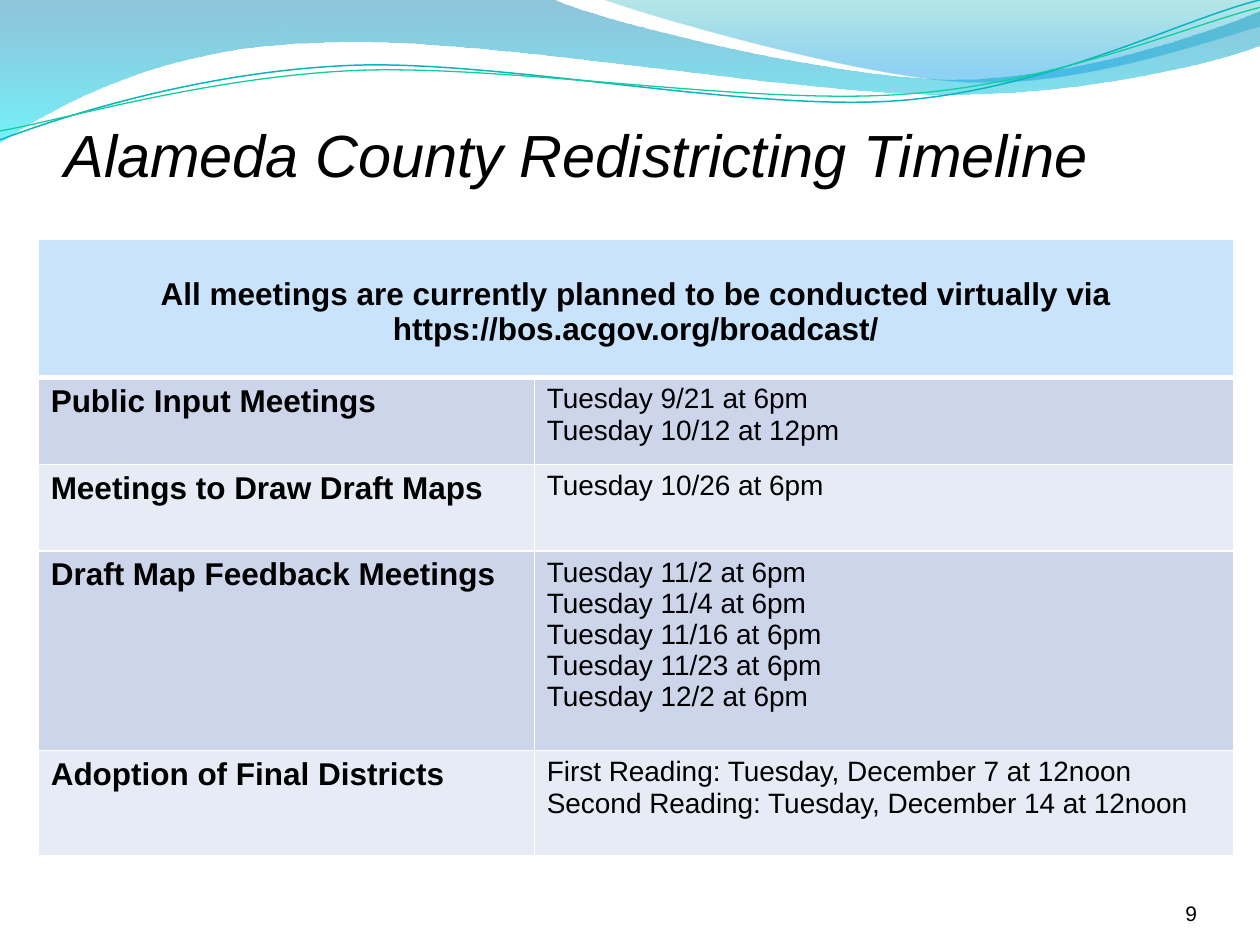
from lxml.etree import SubElement
from pptx import Presentation
from pptx.dml.color import RGBColor
from pptx.enum.text import MSO_ANCHOR, MSO_AUTO_SIZE, PP_ALIGN
from pptx.oxml.ns import qn
from pptx.util import Cm, Pt

# Outlines in cm: a start, then line ends (one point) and curves (three points)
DARK_WAVE = [(0, 0), [(11.18, 0)],
             [(12.09, 0.43), (16.87, 1.6), (19.25, 1.6)],
             [(21.67, 1.6), (24.33, 0.66), (25.4, 0.23)], [(25.4, 0.91)],
             [(24.97, 1.12), (22.1, 1.93), (18.95, 1.9)],
             [(15.8, 1.9), (9.7, 0.71), (6.53, 0.86)],
             [(3.28, 0.91), (1.17, 2.11), (0, 2.87)]]
LIGHT_WAVE = [(12.17, 0),
              [(12.93, 0.28), (17.32, 1.57), (19.53, 1.65)],
              [(21.74, 1.75), (24.41, 0.81), (25.4, 0.53)], [(25.4, 0)]]
TEAL_LINE = [(0, 2.82),
             [(1.22, 2.36), (4.01, 1.45), (7.04, 1.32)],
             [(10.03, 1.19), (15.06, 2.26), (18.11, 2.03)],
             [(21.16, 1.8), (23.83, 0.38), (25.4, 0)]]
GREEN_LINE = [(0, 2.64),
              [(1.19, 2.44), (4.17, 1.55), (7.19, 1.42)],
              [(10.24, 1.3), (15.16, 2.13), (18.21, 1.9)],
              [(21.23, 1.7), (23.9, 0.53), (25.4, 0.15)]]

NOTICE = ("All meetings are currently planned to be conducted virtually via "
          "https://bos.acgov.org/broadcast/")
# Stage, dates, row height in cm
STAGES = [
    ("Public Input Meetings",
     ["Tuesday 9/21 at 6pm", "Tuesday 10/12 at 12pm"], 1.75),
    ("Meetings to Draw Draft Maps", ["Tuesday 10/26 at 6pm"], 1.75),
    ("Draft Map Feedback Meetings",
     ["Tuesday 11/2 at 6pm", "Tuesday 11/4 at 6pm", "Tuesday 11/16 at 6pm",
      "Tuesday 11/23 at 6pm", "Tuesday 12/2 at 6pm"], 4.02),
    ("Adoption of Final Districts",
     ["First Reading: Tuesday, December 7 at 12noon",
      "Second Reading: Tuesday, December 14 at 12noon"], 2.12),
]


def color(value):
    return RGBColor.from_string(value)


def style_text(tf, size, bold=False, italic=False, align=PP_ALIGN.LEFT):
    for p in tf.paragraphs:
        p.alignment = align
        for r in p.runs:
            r.font.name = "Arial"
            r.font.size = Pt(size)
            r.font.bold = bold
            r.font.italic = italic
            r.font.color.rgb = color("000000")


def set_margins(tf, left=0, top=0, right=0, bottom=0):
    tf.margin_left, tf.margin_top = Cm(left), Cm(top)
    tf.margin_right, tf.margin_bottom = Cm(right), Cm(bottom)


def add_outline(s, left, top, outline, close):
    """Add a freeform, then join each three-point part into a cubic curve."""
    start, *parts = outline
    points = [(100 * (left + x), 100 * (top + y))
              for x, y in [start] + [pt for part in parts for pt in part]]
    builder = s.shapes.build_freeform(*points[0], scale=Cm(0.01))
    builder.add_line_segments(points[1:], close=close)
    sp = builder.convert_to_shape()
    sp.shadow.inherit = False

    segments = iter(list(sp._element.spPr.iter(qn("a:lnTo"))))
    for part in parts:
        first, *others = [next(segments) for _ in part]
        if others:
            curve = first.makeelement(qn("a:cubicBezTo"))
            first.addprevious(curve)
            for segment in (first, *others):
                curve.append(segment[0])
                segment.getparent().remove(segment)
    return sp


def add_wave(s, left, top, outline, stops):
    """Add a filled wave; stops are (position, colour, opacity in percent)."""
    sp = add_outline(s, left, top, outline, close=True)
    sp.line.fill.background()
    sp.fill.gradient()
    sp.fill.gradient_angle = 270
    for stop, (position, value, _) in zip(sp.fill.gradient_stops, stops):
        stop.position = position
        stop.color.rgb = color(value)
    tints = sp._element.spPr.iter(qn("a:srgbClr"))
    for tint, (_, _, opacity) in zip(tints, stops):
        SubElement(tint, qn("a:alpha"), val=str(opacity * 1000))


def add_wave_line(s, left, top, outline, value, width):
    sp = add_outline(s, left, top, outline, close=False)
    sp.fill.background()
    sp.line.color.rgb = color(value)
    sp.line.width = Pt(width)


def add_banner(s, left, top):
    add_wave(s, left, top, DARK_WAVE, [(0, "0079AD", 44), (1, "00E9F7", 55)])
    add_wave(s, left, top, LIGHT_WAVE, [(0, "00ABB4", 29), (0.8, "0099E4", 44)])
    add_wave_line(s, left, top, TEAL_LINE, "09B6BE", 0.85)
    add_wave_line(s, left, top, GREEN_LINE, "10CF9B", 0.75)


def set_title(s, left, top, width, height):
    title = s.shapes.title
    title.left, title.top = Cm(left), Cm(top)
    title.width, title.height = Cm(width), Cm(height)
    tf = title.text_frame
    tf.text = "Alameda County Redistricting Timeline"
    tf.auto_size = MSO_AUTO_SIZE.NONE
    tf.vertical_anchor = MSO_ANCHOR.BOTTOM
    set_margins(tf, top=0.13)
    style_text(tf, 34, italic=True)


def set_borders(cell, top=1, bottom=1):
    """Draw white borders, with widths in points."""
    tcPr = cell._tc.get_or_add_tcPr()
    widths = {"a:lnL": 1, "a:lnR": 1, "a:lnT": top, "a:lnB": bottom}
    for i, (side, width) in enumerate(widths.items()):
        ln = tcPr.makeelement(qn(side), {"w": str(Pt(width))})
        SubElement(SubElement(ln, qn("a:solidFill")), qn("a:srgbClr"), val="FFFFFF")
        tcPr.insert(i, ln)


def fill_cell(cell, text, fill, size, **style):
    cell.fill.solid()
    cell.fill.fore_color.rgb = color(fill)
    cell.text_frame.text = text
    style_text(cell.text_frame, size, **style)


def add_timeline(s, left, top, width, header_height=2.78, stage_width=10):
    heights = [header_height] + [height for _, _, height in STAGES]
    frame = s.shapes.add_table(len(heights), 2, Cm(left), Cm(top),
                               Cm(width), Cm(sum(heights)))
    table = frame.table
    table.columns[0].width = Cm(stage_width)
    table.columns[1].width = Cm(width - stage_width)
    for i, height in enumerate(heights):
        table.rows[i].height = Cm(height)
        for cell in table.rows[i].cells:
            set_borders(cell, top=3 if i == 1 else 1, bottom=3 if i == 0 else 1)

    header = table.cell(0, 0)
    header.merge(table.cell(0, 1))
    header.margin_top = Cm(0.75)
    fill_cell(header, NOTICE, "C8E3FB", 18, bold=True, align=PP_ALIGN.CENTER)
    for i, (stage, dates, _) in enumerate(STAGES, 1):
        fill = "CCD5EA" if i % 2 else "E7EBF5"
        fill_cell(table.cell(i, 0), stage, fill, 18, bold=True)
        fill_cell(table.cell(i, 1), "\n".join(dates), fill, 16)


def add_page_number(s, left, top, width, height):
    tf = s.shapes.add_textbox(Cm(left), Cm(top), Cm(width), Cm(height)).text_frame
    tf.word_wrap = True
    tf.vertical_anchor = MSO_ANCHOR.BOTTOM
    set_margins(tf)
    tf.text = "9"
    style_text(tf, 12, align=PP_ALIGN.RIGHT)


def main():
    prs = Presentation()
    prs.slide_width, prs.slide_height = Cm(25.4), Cm(19.05)
    s = prs.slides.add_slide(prs.slide_layouts[5])
    add_banner(s, 0, 0)
    set_title(s, 1.3, 1.85, 22.86, 1.96)
    add_timeline(s, 0.77, 4.83, 24.1)
    add_page_number(s, 22.02, 17.65, 2.11, 1.02)
    prs.save("out.pptx")


if __name__ == "__main__":
    main()
